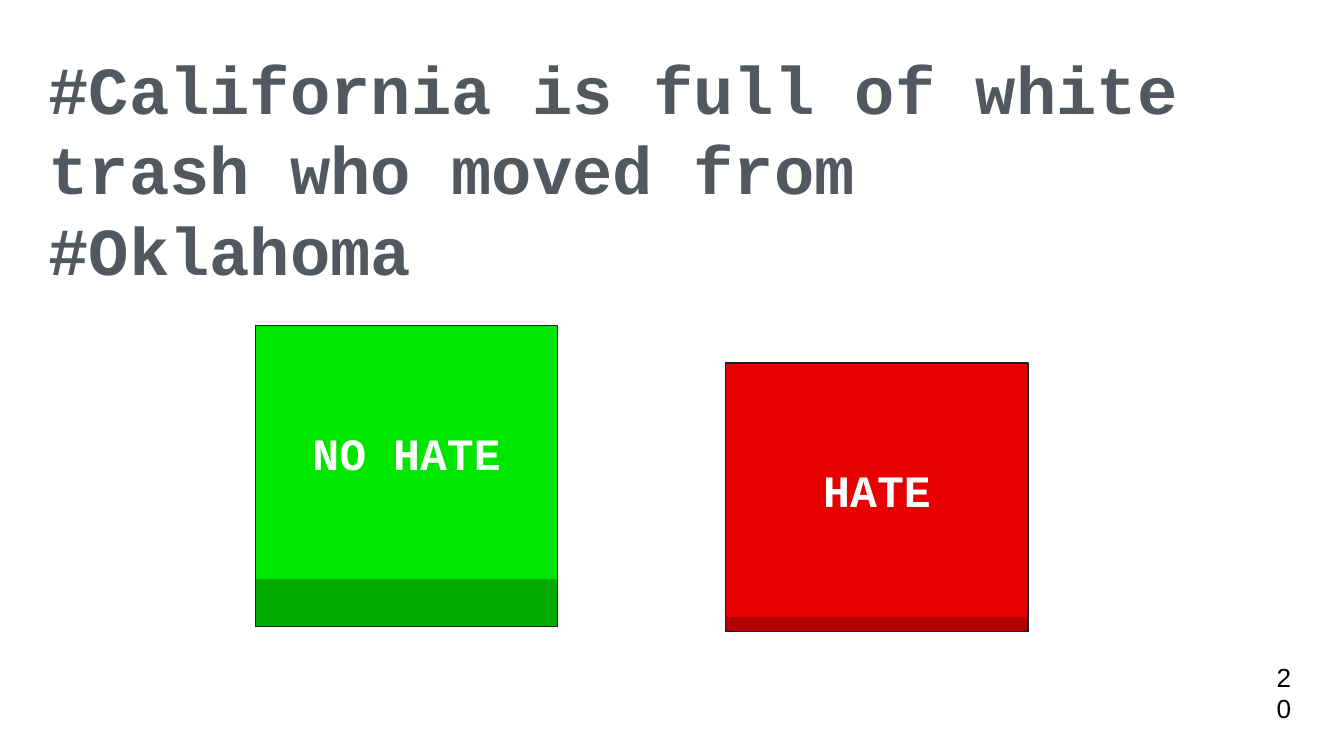
import pptx
import pptx.dml.color
import pptx.enum.shapes
import pptx.enum.text
import pptx.util
from dataclasses import dataclass
from pptx.util import Inches


@dataclass(frozen=True)
class Theme:
    heading: str = "525860"
    outline: str = "18222D"
    white: str = "FFFFFF"
    black: str = "000000"
    green: str = "00E600"
    dark_green: str = "00AC00"
    red: str = "E60000"
    dark_red: str = "B30000"
    mono: str = "Courier New"
    sans: str = "Arial"
    heading_size: int = 36
    button_size: int = 24
    number_size: int = 14


theme = Theme()
Align = pptx.enum.text.PP_ALIGN
Anchor = pptx.enum.text.MSO_ANCHOR

deck = pptx.Presentation()
deck.slide_width = Inches(10)
deck.slide_height = deck.slide_width * 9 // 16
page = deck.slides.add_slide(deck.slide_layouts[6])


def add_rectangle(left, top, width, height, fill=None, outlined=False):
    shape = page.shapes.add_shape(
        pptx.enum.shapes.MSO_SHAPE.RECTANGLE,
        Inches(left), Inches(top), Inches(width), Inches(height))
    shape.shadow.inherit = False
    if fill:
        shape.fill.solid()
        shape.fill.fore_color.rgb = pptx.dml.color.RGBColor.from_string(fill)
    else:
        shape.fill.background()
    if outlined:
        shape.line.color.rgb = pptx.dml.color.RGBColor.from_string(theme.outline)
        shape.line.width = pptx.util.Pt(0.75)
    else:
        shape.line.fill.background()
    return shape


def write(box, text, size, color, font, bold, align, anchor, inset):
    frame = box.text_frame
    frame.word_wrap = True
    frame.vertical_anchor = anchor
    frame.margin_left = frame.margin_right = Inches(inset)
    frame.margin_top = frame.margin_bottom = Inches(inset)
    para = frame.paragraphs[0]
    para.alignment = align
    span = para.add_run()
    span.text = text
    span.font.size = pptx.util.Pt(size)
    span.font.name = font
    span.font.bold = bold
    span.font.color.rgb = pptx.dml.color.RGBColor.from_string(color)
    return para


number = page.shapes.add_textbox(Inches(9.4), Inches(5.05), Inches(0.25), Inches(0.21))
write(number, "20", theme.number_size, theme.black, theme.sans, False,
      Align.LEFT, Anchor.MIDDLE, 0.1)

heading = page.shapes.add_textbox(Inches(0.29), Inches(0.28), Inches(9.1), Inches(0.88))
para = write(heading, "#California is full of white trash who moved from #Oklahoma",
             theme.heading_size, theme.heading, theme.mono, True,
             Align.LEFT, Anchor.TOP, 0.07)
para.space_after = pptx.util.Pt(10)

# Each button: label, left, top of the face, visible depth of the base, colours
buttons = [
    ("NO HATE", 1.9, 2.42, 0.35, theme.green, theme.dark_green),
    ("HATE", 5.4, 2.7, 0.11, theme.red, theme.dark_red),
]
width, height = 2.25, 1.89
for label, left, top, depth, face_color, base_color in buttons:
    add_rectangle(left, top + depth, width, height, base_color, outlined=True)
    face = add_rectangle(left, top, width, height, face_color)
    write(face, label, theme.button_size, theme.white, theme.mono, True,
          Align.CENTER, Anchor.MIDDLE, 0.1)
    add_rectangle(left, top, width, height + depth, outlined=True)

deck.save("out.pptx")
